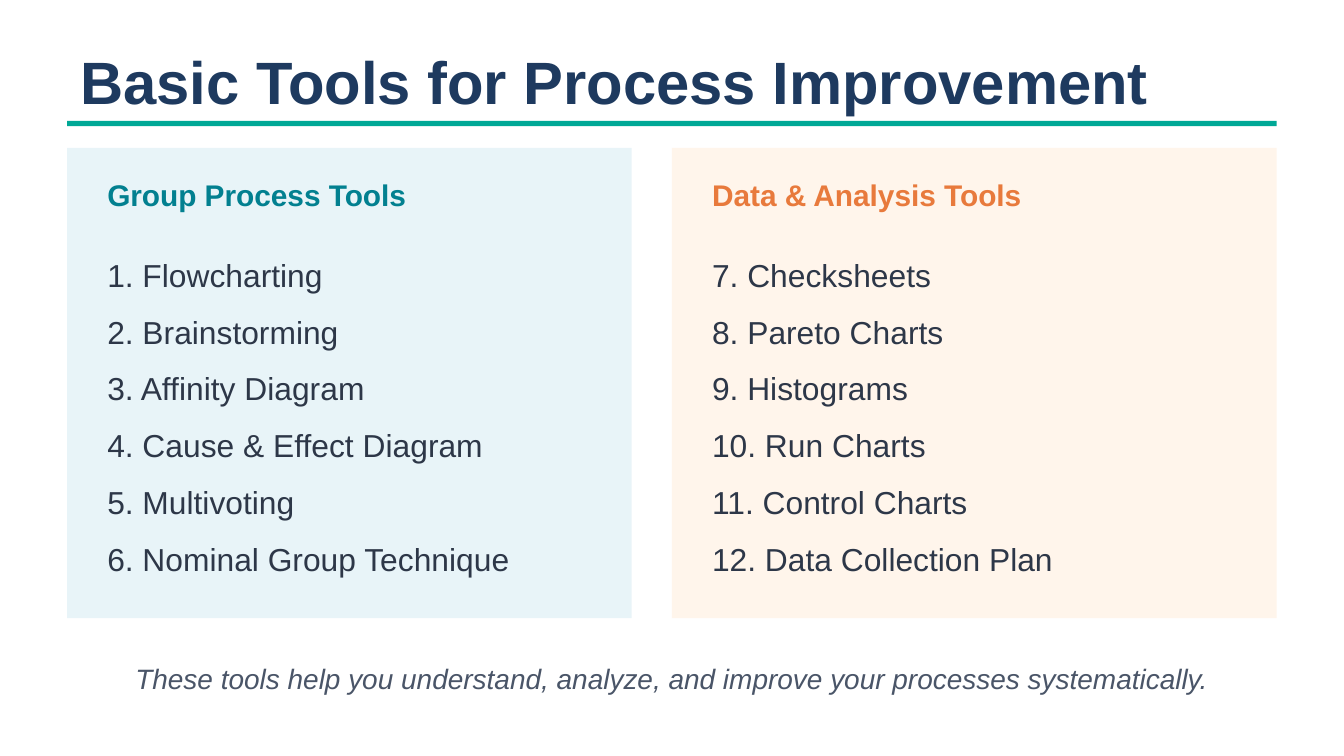
"""Build the slide on basic tools for process improvement."""
from dataclasses import dataclass

from pptx import Presentation
from pptx.dml.color import RGBColor
from pptx.enum.shapes import MSO_SHAPE
from pptx.enum.text import MSO_ANCHOR, PP_ALIGN
from pptx.slide import Slide
from pptx.util import Inches, Pt

RECTANGLE = MSO_SHAPE.RECTANGLE
MIDDLE = MSO_ANCHOR.MIDDLE
LEFT, CENTER = PP_ALIGN.LEFT, PP_ALIGN.CENTER
FONT = "Arial"
SLIDE_WIDTH = 10
SLIDE_HEIGHT = SLIDE_WIDTH * 9 / 16
MARGIN, CONTENT_WIDTH = 0.5, 9
PANEL_TOP, PANEL_HEIGHT, PANEL_PADDING = 1.1, 3.5, 0.2
PANEL_TEXT_WIDTH = 4


@dataclass(frozen=True)
class Box:
    left: float
    top: float
    width: float
    height: float

    def lengths(self) -> list[int]:
        return [Inches(n) for n in (self.left, self.top, self.width, self.height)]


@dataclass(frozen=True)
class TextStyle:
    size: float
    color: str
    bold: bool = False
    italic: bool = False
    align: PP_ALIGN = LEFT
    space_after: float = 0


@dataclass(frozen=True)
class ToolPanel:
    left: float
    width: float
    fill: str
    accent: str
    heading: str
    first_number: int
    tools: tuple[str, ...]


TITLE_STYLE = TextStyle(32, "1E3A5F", bold=True)
TOOL_STYLE = TextStyle(17, "2D3748", space_after=10)
SUMMARY_STYLE = TextStyle(15, "4A5568", italic=True, align=CENTER)

PANELS = (
    ToolPanel(
        MARGIN, 4.2, "E8F4F8", "028090", "Group Process Tools", 1,
        ("Flowcharting", "Brainstorming", "Affinity Diagram",
         "Cause & Effect Diagram", "Multivoting", "Nominal Group Technique"),
    ),
    ToolPanel(
        5, 4.5, "FFF5EB", "E87A3C", "Data & Analysis Tools", 7,
        ("Checksheets", "Pareto Charts", "Histograms",
         "Run Charts", "Control Charts", "Data Collection Plan"),
    ),
)


def rgb(hex_color: str) -> RGBColor:
    return RGBColor.from_string(hex_color)


def add_block(slide: Slide, box: Box, fill: str) -> None:
    block = slide.shapes.add_shape(RECTANGLE, *box.lengths())
    block.shadow.inherit = False
    block.fill.solid()
    block.fill.fore_color.rgb = rgb(fill)
    block.line.fill.background()


def add_text(slide: Slide, box: Box, lines: list[str], style: TextStyle) -> None:
    frame = slide.shapes.add_textbox(*box.lengths()).text_frame
    frame.word_wrap = True
    frame.vertical_anchor = MIDDLE
    frame.text = "\n".join(lines)
    for paragraph in frame.paragraphs:
        paragraph.alignment = style.align
        paragraph.space_after = Pt(style.space_after)
        font = paragraph.font
        font.name = FONT
        font.size = Pt(style.size)
        font.bold = style.bold
        font.italic = style.italic
        font.color.rgb = rgb(style.color)


def add_panel(slide: Slide, panel: ToolPanel) -> None:
    text_left = panel.left + PANEL_PADDING
    numbered_tools = [
        f"{number}. {tool}"
        for number, tool in enumerate(panel.tools, panel.first_number)
    ]
    add_block(slide, Box(panel.left, PANEL_TOP, panel.width, PANEL_HEIGHT), panel.fill)
    add_text(slide, Box(text_left, 1.2, PANEL_TEXT_WIDTH, 0.5), [panel.heading],
             TextStyle(16, panel.accent, bold=True))
    add_text(slide, Box(text_left, 1.7, PANEL_TEXT_WIDTH, 2.8), numbered_tools, TOOL_STYLE)


def main() -> None:
    presentation = Presentation()
    presentation.slide_width = Inches(SLIDE_WIDTH)
    presentation.slide_height = Inches(SLIDE_HEIGHT)
    slide = presentation.slides.add_slide(presentation.slide_layouts[6])
    slide.background.fill.solid()
    slide.background.fill.fore_color.rgb = rgb("FFFFFF")

    add_text(slide, Box(MARGIN, 0.3, CONTENT_WIDTH, 0.6),
             ["Basic Tools for Process Improvement"], TITLE_STYLE)
    add_block(slide, Box(MARGIN, 0.9, CONTENT_WIDTH, 0.04), "00A896")
    for panel in PANELS:
        add_panel(slide, panel)
    add_text(slide, Box(MARGIN, 4.8, CONTENT_WIDTH, 0.5),
             ["These tools help you understand, analyze, and improve "
              "your processes systematically."], SUMMARY_STYLE)
    presentation.save("out.pptx")


if __name__ == "__main__":
    main()
